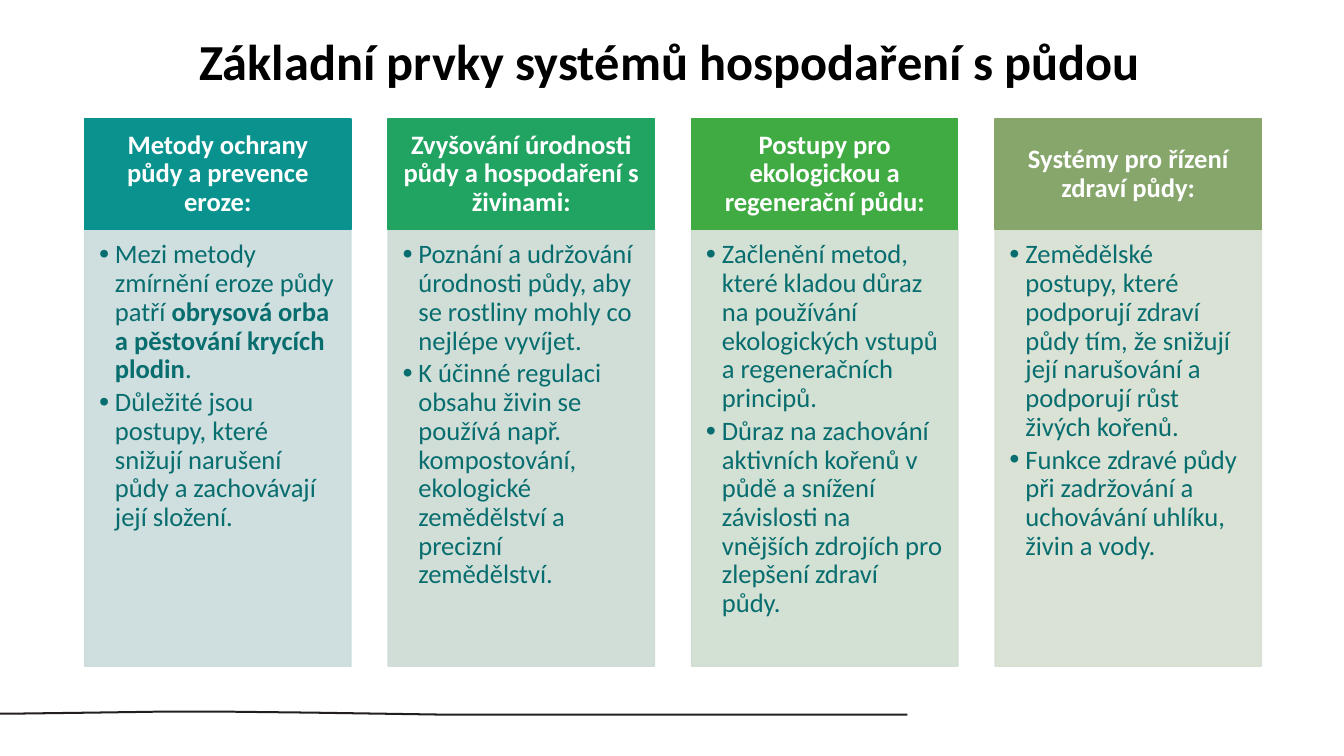
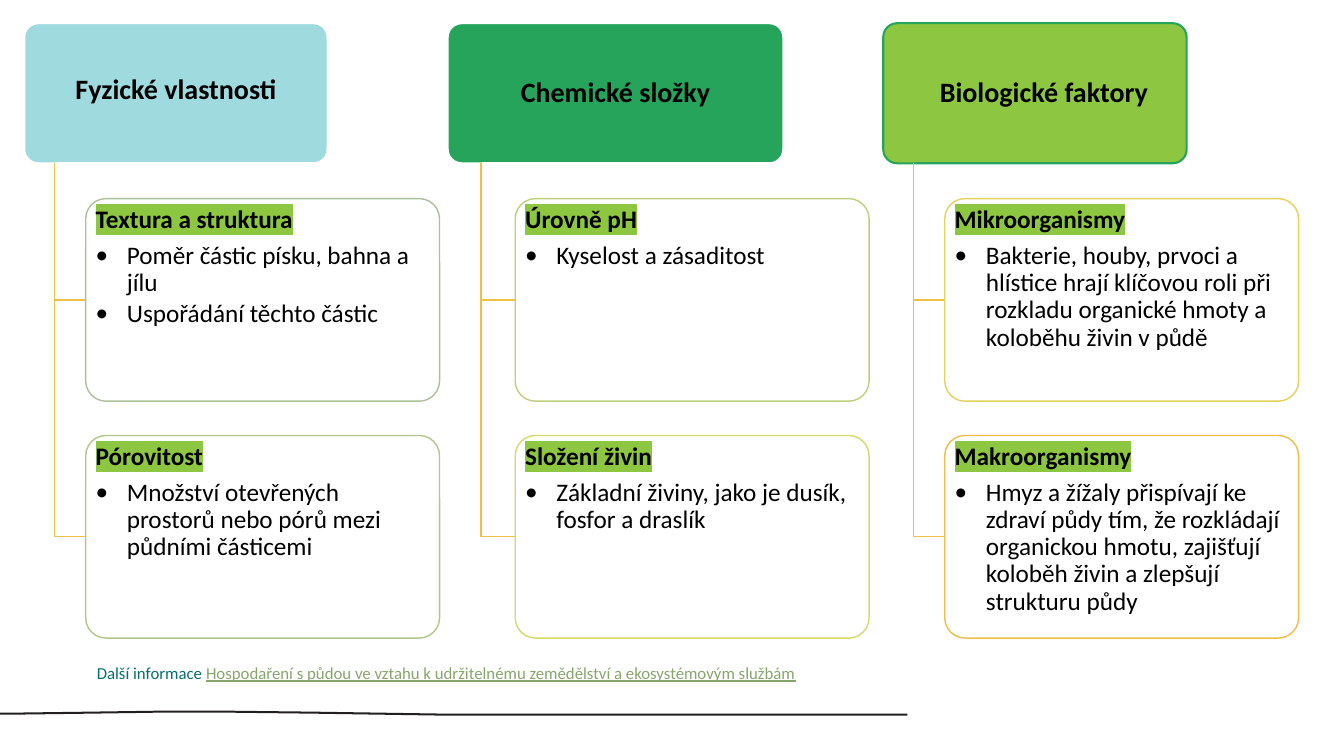
from dataclasses import dataclass

from lxml import etree
from pptx import Presentation
from pptx.dml.color import RGBColor
from pptx.enum.shapes import MSO_SHAPE
from pptx.enum.text import MSO_ANCHOR, MSO_AUTO_SIZE, PP_ALIGN
from pptx.oxml.ns import qn
from pptx.util import Inches, Pt

RECT, ROUND = MSO_SHAPE.RECTANGLE, MSO_SHAPE.ROUNDED_RECTANGLE
TOP, MIDDLE = MSO_ANCHOR.TOP, MSO_ANCHOR.MIDDLE
LEFT, CENTER = PP_ALIGN.LEFT, PP_ALIGN.CENTER
NO_FIT = MSO_AUTO_SIZE.NONE
COMPARISON, BLANK = 4, 6  # layouts of the default template


@dataclass(frozen=True)
class Theme:
    font: str = "Calibri"
    black: str = "000000"
    white: str = "FFFFFF"
    teal: str = "086D6E"
    link: str = "87A66E"
    lime: str = "8DC641"
    green: str = "26A45B"
    amber: str = "EFBF47"
    ink: str = "231F20"
    title: float = 36
    heading: float = 20
    column: float = 19
    card: float = 18
    note: float = 12
    tight: float = 0.9  # line spacing
    see_through: int = 90  # opacity in percent


@dataclass(frozen=True)
class Grid:
    left: float
    top: float
    col_width: float
    row_height: float
    col_gap: float
    row_gap: float = 0

    def cell(self, col, row=0):
        return (self.left + col * (self.col_width + self.col_gap),
                self.top + row * (self.row_height + self.row_gap),
                self.col_width, self.row_height)


T = Theme()
COLUMNS = Grid(0.84, 1.18, 2.64, 1.1, 0.37)
LIST_HEIGHT = 4.33
CARDS = Grid(0.85, 1.97, 3.51, 2.01, 0.75, 0.34)
HEAD_TOP, HEAD_HEIGHT = 0.23, 1.39

# heading, heading colour, list colour, list items as (text, bold) runs
ELEMENTS = [
    ("Metody ochrany půdy a prevence eroze:", "0A938E", "CADBDB",
     [[("Mezi metody zmírnění eroze půdy patří ", False),
       ("obrysová orba a pěstování krycích plodin", True), (".", False)],
      [("Důležité jsou postupy, které snižují narušení půdy a zachovávají "
        "její složení.", False)]]),
    ("Zvyšování úrodnosti půdy a hospodaření s živinami:", "21A362", "CCDBD4",
     [[("Poznání a udržování úrodnosti půdy, aby se rostliny mohly co "
        "nejlépe vyvíjet.", False)],
      [("K účinné regulaci obsahu živin se používá např. kompostování, "
        "ekologické zemědělství a precizní zemědělství.", False)]]),
    ("Postupy pro ekologickou a regenerační půdu:", "40AB43", "CFDDD0",
     [[("Začlenění metod, které kladou důraz na používání ekologických "
        "vstupů a regeneračních principů.", False)],
      [("Důraz na zachování aktivních kořenů v půdě a snížení závislosti na "
        "vnějších zdrojích pro zlepšení zdraví půdy.", False)]]),
    ("Systémy pro řízení zdraví půdy:", "86A66B", "D6DFD2",
     [[("Zemědělské postupy, které podporují zdraví půdy tím, že snižují "
        "její narušování a podporují růst živých kořenů.", False)],
      [("Funkce zdravé půdy při zadržování a uchovávání uhlíku, živin a "
        "vody.", False)]]),
]

# heading, left, width, fill, line, text insets, cards as (title, line, items)
PROPERTIES = [
    ("Fyzické vlastnosti", 0.24, 3.01, "9FDADF", T.white, (0.04, 0.02, 0.04, 0.08), [
        ("Textura a struktura", "ACC199",
         ["Poměr částic písku, bahna a jílu", "Uspořádání těchto částic"]),
        ("Pórovitost", "B1C78A",
         ["Množství otevřených prostorů nebo pórů mezi půdními částicemi"])]),
    ("Chemické složky", 4.44, 3.33, T.green, T.white, (0.04, 0.02, 0.04, 0.02), [
        ("Úrovně pH", "BDD07B", ["Kyselost a zásaditost"]),
        ("Složení živin", "D4DA6B",
         ["Základní živiny, jako je dusík, fosfor a draslík"])]),
    ("Biologické faktory", 8.76, 3.01, T.lime, T.green, (0.22, 0.02, 0.04, 0.02), [
        ("Mikroorganismy", "E4D25A",
         ["Bakterie, houby, prvoci a hlístice hrají klíčovou roli při "
          "rozkladu organické hmoty a koloběhu živin v půdě"]),
        ("Makroorganismy", "EFBD48",
         ["Hmyz a žížaly přispívají ke zdraví půdy tím, že rozkládají "
          "organickou hmotu, zajišťují koloběh živin a zlepšují strukturu "
          "půdy"])]),
]


# Shape helpers
def rgb(value):
    return RGBColor.from_string(value)


def place(sp, left, top, width, height):
    sp.left, sp.top = Inches(left), Inches(top)
    sp.width, sp.height = Inches(width), Inches(height)


def fade(sp):
    for color in sp.element.spPr.iter(qn("a:srgbClr")):
        etree.SubElement(color, qn("a:alpha"), val=str(T.see_through * 1000))


def paint(sp, fill, line, width=1.0):
    sp.shadow.inherit = False
    if fill:
        sp.fill.solid()
        sp.fill.fore_color.rgb = rgb(fill)
    else:
        sp.fill.background()
    if line:
        sp.line.color.rgb = rgb(line)
        sp.line.width = Pt(width)
    else:
        sp.line.fill.background()


def add_box(slide, kind, area, fill, line, width=1.0):
    sp = slide.shapes.add_shape(kind, *map(Inches, area))
    if kind == ROUND:
        sp.adjustments[0] = 0.1
    paint(sp, fill, line, width)
    return sp


def add_outline(slide, points, close=False):
    (x, y), *rest = [(Inches(a), Inches(b)) for a, b in points]
    builder = slide.shapes.build_freeform(x, y)
    builder.add_line_segments(rest, close=close)
    return builder.convert_to_shape()


# Text helpers
def frame(sp, insets, anchor=TOP):
    tf = sp.text_frame
    tf.word_wrap = True
    tf.auto_size = NO_FIT
    tf.vertical_anchor = anchor
    (tf.margin_left, tf.margin_top,
     tf.margin_right, tf.margin_bottom) = map(Inches, insets)
    return tf


def add_paragraph(tf, first=False, align=LEFT, before=0):
    p = tf.paragraphs[0] if first else tf.add_paragraph()
    p.alignment = align
    p.line_spacing = T.tight
    p.space_before = Pt(before)
    p.space_after = Pt(0)
    return p


def add_run(p, text, size, color, bold=False, underline=None, highlight=None):
    r = p.add_run()
    r.text = text
    r.font.size = Pt(size)
    r.font.bold = bold
    r.font.underline = underline
    r.font.color.rgb = rgb(color)
    r.font.name = T.font
    if highlight:
        mark = etree.Element(qn("a:highlight"))
        etree.SubElement(mark, qn("a:srgbClr"), val=highlight)
        r.font._element.find(qn("a:solidFill")).addnext(mark)


def set_bullet(p, char, indent, color):
    pPr = p._p.get_or_add_pPr()
    pPr.set("marL", str(Inches(indent)))
    pPr.set("indent", str(-Inches(indent)))
    bullet_color = etree.SubElement(pPr, qn("a:buClr"))
    etree.SubElement(bullet_color, qn("a:srgbClr"), val=color)
    etree.SubElement(pPr, qn("a:buFont"), typeface=T.font)
    etree.SubElement(pPr, qn("a:buChar"), char=char)


def add_heading(sp, text, size, color, insets):
    p = add_paragraph(frame(sp, insets, MIDDLE), first=True, align=CENTER)
    add_run(p, text, size, color, bold=True)


# Parts of the slides
def add_ground_line(prs, slide):
    """Draw the wavy line and hand it to the master, for all slides."""
    wave = [(0, 7.07), (0.14, 7.07), (0.9, 7.06), (1.6, 7.05), (2.23, 7.05),
            (3.1, 7.06), (4.43, 7.08), (9, 7.08)]
    under = [(x, y + 0.02) for x, y in reversed(wave)]
    sp = add_outline(slide, wave + under, close=True)
    paint(sp, T.ink, None)
    prs.slide_master.element.cSld.spTree.append(sp.element)


def add_column(slide, body, col, heading, head_color, list_color, items):
    left, top, width, height = area = COLUMNS.cell(col)
    head = add_box(slide, RECT, area, head_color, head_color)
    add_heading(head, heading, T.column, T.white, (0.15, 0.08, 0.15, 0.08))

    place(body, left, top + height, width, LIST_HEIGHT)
    paint(body, list_color, list_color)
    fade(body)
    tf = frame(body, (0.11, 0.11, 0.15, 0.17))
    for i, runs in enumerate(items):
        p = add_paragraph(tf, first=i == 0, before=2.9 if i else 0)
        set_bullet(p, "∙", 0.19, T.teal)
        for text, bold in runs:
            add_run(p, text, T.column, T.teal, bold)


def add_card(slide, area, title, line, items):
    card = add_box(slide, ROUND, area, T.white, None)
    fade(card)
    card.line.color.rgb = rgb(line)
    card.line.width = Pt(1)
    tf = frame(card, (0.04, 0.02, 0.04, 0.02))
    add_run(add_paragraph(tf, first=True), title, T.card, T.black, True,
            highlight=T.lime)
    for i, item in enumerate(items):
        p = add_paragraph(tf, before=2.7 if i else 6.3)
        set_bullet(p, "•", 0.31, T.black)
        add_run(p, item, T.card, T.black)


def add_branch(slide, col, heading, left, width, fill, line, insets, cards):
    head = add_box(slide, ROUND, (left, HEAD_TOP, width, HEAD_HEIGHT),
                   fill, line, 1.5)
    add_heading(head, heading, T.heading, T.black, insets)
    stem = left + width / 10
    for row, card in enumerate(cards):
        area = CARDS.cell(col, row)
        middle = area[1] + area[3] / 2
        elbow = add_outline(slide, [(stem, HEAD_TOP + HEAD_HEIGHT),
                                    (stem, middle), (area[0], middle)])
        paint(elbow, None, T.amber)
        add_card(slide, area, *card)


# Slides
def build_elements(prs):
    slide = prs.slides.add_slide(prs.slide_layouts[COMPARISON])
    add_ground_line(prs, slide)
    title, *bodies = slide.placeholders
    place(title, 0.73, 0.28, 11.83, 0.71)
    add_heading(title, "Základní prvky systémů hospodaření s půdou",
                T.title, T.black, (0.1, 0.05, 0.1, 0.05))
    for col, (body, element) in enumerate(zip(bodies, ELEMENTS)):
        add_column(slide, body, col, *element)


def build_properties(prs):
    slide = prs.slides.add_slide(prs.slide_layouts[BLANK])
    for col, branch in enumerate(PROPERTIES):
        add_branch(slide, col, *branch)
    note = slide.shapes.add_textbox(*map(Inches, (0.52, 6.27, 8.24, 0.83)))
    p = add_paragraph(frame(note, (0.44, 0.02, 0.02, 0.02), MIDDLE), first=True)
    add_run(p, "Další informace ", T.note, T.teal)
    add_run(p, "Hospodaření s půdou ve vztahu k udržitelnému zemědělství a "
               "ekosystémovým službám", T.note, T.link, underline=True)


def main():
    prs = Presentation()
    prs.slide_width, prs.slide_height = Inches(13.33), Inches(7.5)
    build_elements(prs)
    build_properties(prs)
    prs.save("out.pptx")


if __name__ == "__main__":
    main()
